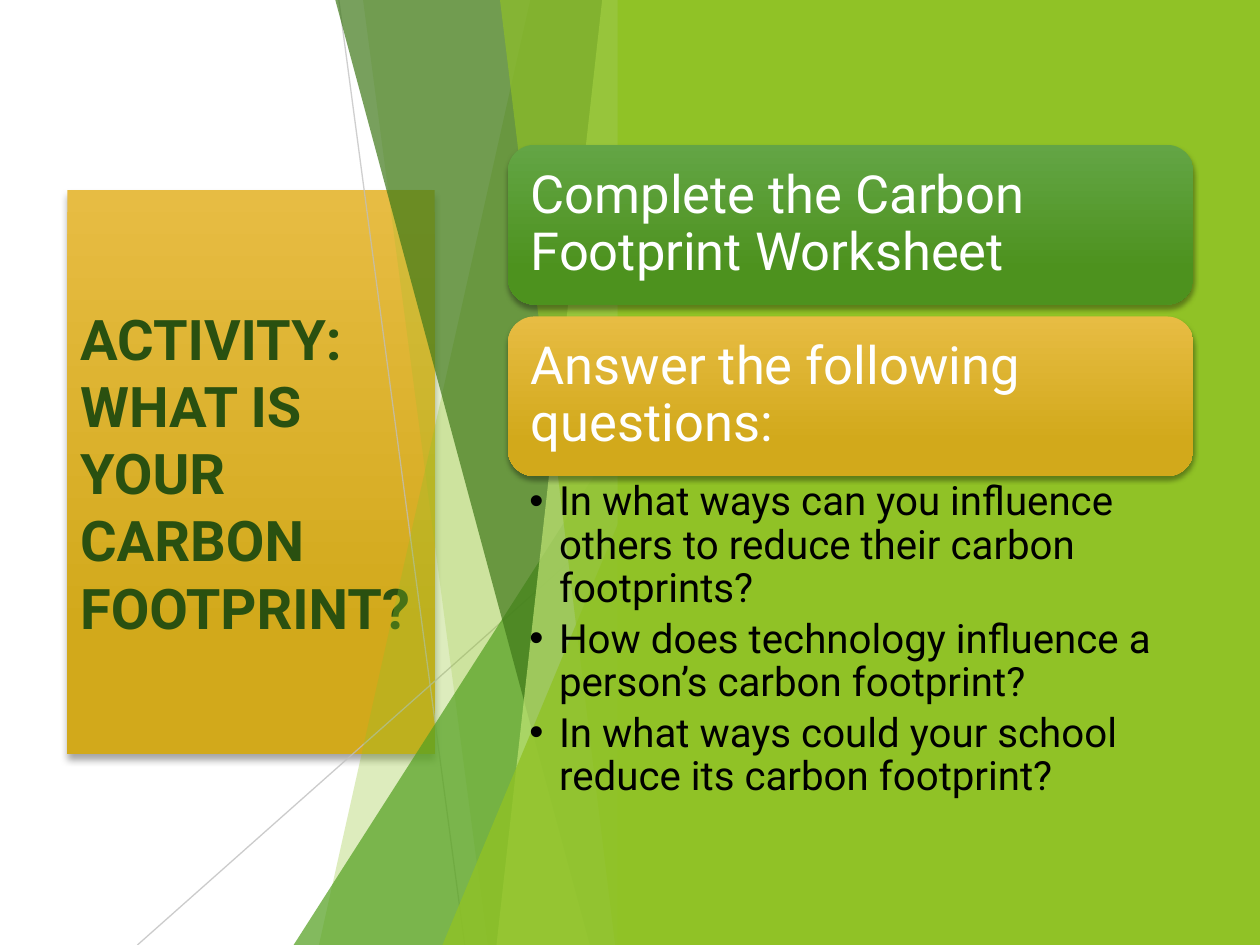
"""Build the carbon footprint activity slide."""
import pptx
import pptx.dml.color
import pptx.enum.shapes
import pptx.enum.text
import pptx.oxml
import pptx.oxml.ns
import pptx.util

Cm, Pt = pptx.util.Cm, pptx.util.Pt
RGB = pptx.dml.color.RGBColor.from_string
SHAPE = pptx.enum.shapes.MSO_SHAPE
ANCHOR = pptx.enum.text.MSO_ANCHOR
qn = pptx.oxml.ns.qn

T = {
    "lime": "90C226", "green": "54A021", "forest": "3F7819", "pale": "C0E474",
    "rule": "BFBFBF", "shadow": "000000",
    "gold_grad": ("E7BC43", "D2A91B"), "green_grad": ("63A545", "4D921E"),
    "title": ("2A5010", {"name": "Roboto", "size": Pt(32), "bold": True}),
    "card": ("FFFFFF", {"name": "Roboto", "size": Pt(30)}),
    "list": ("000000", {"name": "Roboto", "size": Pt(23)}),
}


def set_alpha(sp, percent):
    for clr in sp._element.spPr.iter(qn("a:srgbClr")):
        etree_alpha = pptx.oxml.parse_xml(
            f'<a:alpha {pptx.oxml.ns.nsdecls("a")} val="{percent * 1000}"/>')
        clr.append(etree_alpha)


def write_text(p, text, style, p_format):
    for name, value in p_format.items():
        setattr(p, name, value)
    r = p.add_run()
    r.text = text
    color, font = style
    for name, value in font.items():
        setattr(r.font, name, value)
    r.font.color.rgb = RGB(color)


prs = pptx.Presentation()
prs.slide_width, prs.slide_height = Cm(25.4), Cm(19.05)
s = prs.slides.add_slide(prs.slide_layouts[1])
LEFT = pptx.enum.text.PP_ALIGN.LEFT
bottom, facet_right = 19.05, 12.7

title = s.shapes.title
box = {"left": Cm(1.36), "top": Cm(3.83), "width": Cm(7.4), "height": Cm(11.38)}
for name, value in box.items():
    setattr(title, name, value)
tf = title.text_frame
tf.auto_size = pptx.enum.text.MSO_AUTO_SIZE.NONE
tf.vertical_anchor = ANCHOR.MIDDLE
write_text(tf.paragraphs[0], "ACTIVITY: WHAT IS YOUR CARBON FOOTPRINT?", T["title"],
           {"alignment": LEFT})

for x1, y1, x2, y2, alpha in [(6.83, 0, 9.37, bottom, 75),
                              (facet_right, 10.24, 2.77, bottom, 80)]:
    line = s.shapes.add_connector(pptx.enum.shapes.MSO_CONNECTOR.STRAIGHT,
                                  Cm(x1), Cm(y1), Cm(x2), Cm(y2))
    line.line.width = Pt(0.75)
    line.line.color.rgb = RGB(T["rule"])
    set_alpha(line, alpha)
    pptx.oxml.ns.qn("a:effectLst")
    line._element.spPr.append(
        pptx.oxml.parse_xml(f'<a:effectLst {pptx.oxml.ns.nsdecls("a")}/>'))

facets = [
    ("band", 10.69, 6.43, "lime", 30),
    ("band", 7.32, 9.83, "lime", 20),
    ("triangle", 5.92, 8.46, "green", 72),
    ("band", 6.76, 11.89, "forest", 70),
    ("band", 12.14, 10.01, "pale", 70),
    ("band", 10.08, 12.4, "lime", 65),
    ("triangle", 8.92, 9.98, "lime", 80),
]
for kind, a, b, color, alpha in facets:
    if kind == "band":
        fb = s.shapes.build_freeform(Cm(a), 0)
        fb.add_line_segments([(Cm(facet_right), 0), (Cm(facet_right), Cm(bottom)),
                              (Cm(b), Cm(bottom))])
        sp = fb.convert_to_shape()
    else:
        sp = s.shapes.add_shape(SHAPE.ISOSCELES_TRIANGLE, Cm(a), Cm(b),
                                Cm(facet_right - a), Cm(bottom - b))
        sp.adjustments[0] = 1
    sp.fill.solid()
    sp.fill.fore_color.rgb = RGB(T[color])
    sp.line.fill.background()
    sp.shadow.inherit = False
    set_alpha(sp, alpha)

panel = s.shapes.add_shape(SHAPE.RECTANGLE, Cm(12.45), 0, Cm(12.95), Cm(bottom))
panel.fill.solid()
panel.fill.fore_color.rgb = RGB(T["lime"])
panel.line.fill.background()
panel.shadow.inherit = False

raised = [(title, "gold_grad", 4, 3)]
cards = [("Complete the Carbon Footprint Worksheet", "green_grad"),
         ("Answer the following questions:", "gold_grad")]
for i, (text, grad) in enumerate(cards):
    card = s.shapes.add_shape(SHAPE.ROUNDED_RECTANGLE, Cm(10.24), Cm(2.92 + 3.46 * i),
                              Cm(13.82), Cm(3.22))
    tf = card.text_frame
    for side in ("left", "top", "right", "bottom"):
        setattr(tf, f"margin_{side}", Cm(0.3))
    tf.word_wrap = True
    tf.vertical_anchor = ANCHOR.MIDDLE
    write_text(tf.paragraphs[0], text, T["card"], {"alignment": LEFT, "line_spacing": 0.9})
    raised.append((card, grad, 3, 2))

for sp, grad, blur, dist in raised:
    sp.fill.gradient()
    sp.fill.gradient_angle = 270
    for stop, color, position in zip(sp.fill.gradient_stops, T[grad], (0, 0.78)):
        stop.color.rgb = RGB(color)
        stop.position = position
    sp.line.fill.background()
    sp.shadow.inherit = False
    sp._element.spPr.find(qn("a:effectLst")).append(pptx.oxml.parse_xml(
        f'<a:outerShdw {pptx.oxml.ns.nsdecls("a")} blurRad="{Pt(blur)}" dist="{Pt(dist)}" '
        f'dir="5400000" rotWithShape="0"><a:srgbClr val="{T["shadow"]}">'
        '<a:alpha val="35000"/></a:srgbClr></a:outerShdw>'))

body = s.placeholders[1]
box = {"left": Cm(10.24), "top": Cm(9.6), "width": Cm(13.82), "height": Cm(6.55)}
for name, value in box.items():
    setattr(body, name, value)
s.shapes._spTree.append(body._element)
tf = body.text_frame
frame = {"margin_left": Cm(0.43), "margin_top": Cm(0.1), "margin_right": Cm(0.58),
         "margin_bottom": Cm(0.1), "vertical_anchor": ANCHOR.TOP,
         "auto_size": pptx.enum.text.MSO_AUTO_SIZE.NONE}
for name, value in frame.items():
    setattr(tf, name, value)
questions = [
    "In what ways can you influence others to reduce their carbon footprints?",
    "How does technology influence a person’s carbon footprint?",
    "In what ways could your school reduce its carbon footprint?",
]
for i, text in enumerate(questions):
    p = tf.add_paragraph() if i else tf.paragraphs[0]
    pPr = p._p.get_or_add_pPr()
    pPr.set("marL", str(Cm(0.6)))
    pPr.set("indent", str(-Cm(0.6)))
    pPr.append(pptx.oxml.parse_xml(f'<a:buChar {pptx.oxml.ns.nsdecls("a")} char="•"/>'))
    write_text(p, text, T["list"], {"alignment": LEFT, "line_spacing": 0.9,
                                    "space_before": Pt(0), "space_after": Pt(4)})

prs.save("out.pptx")
